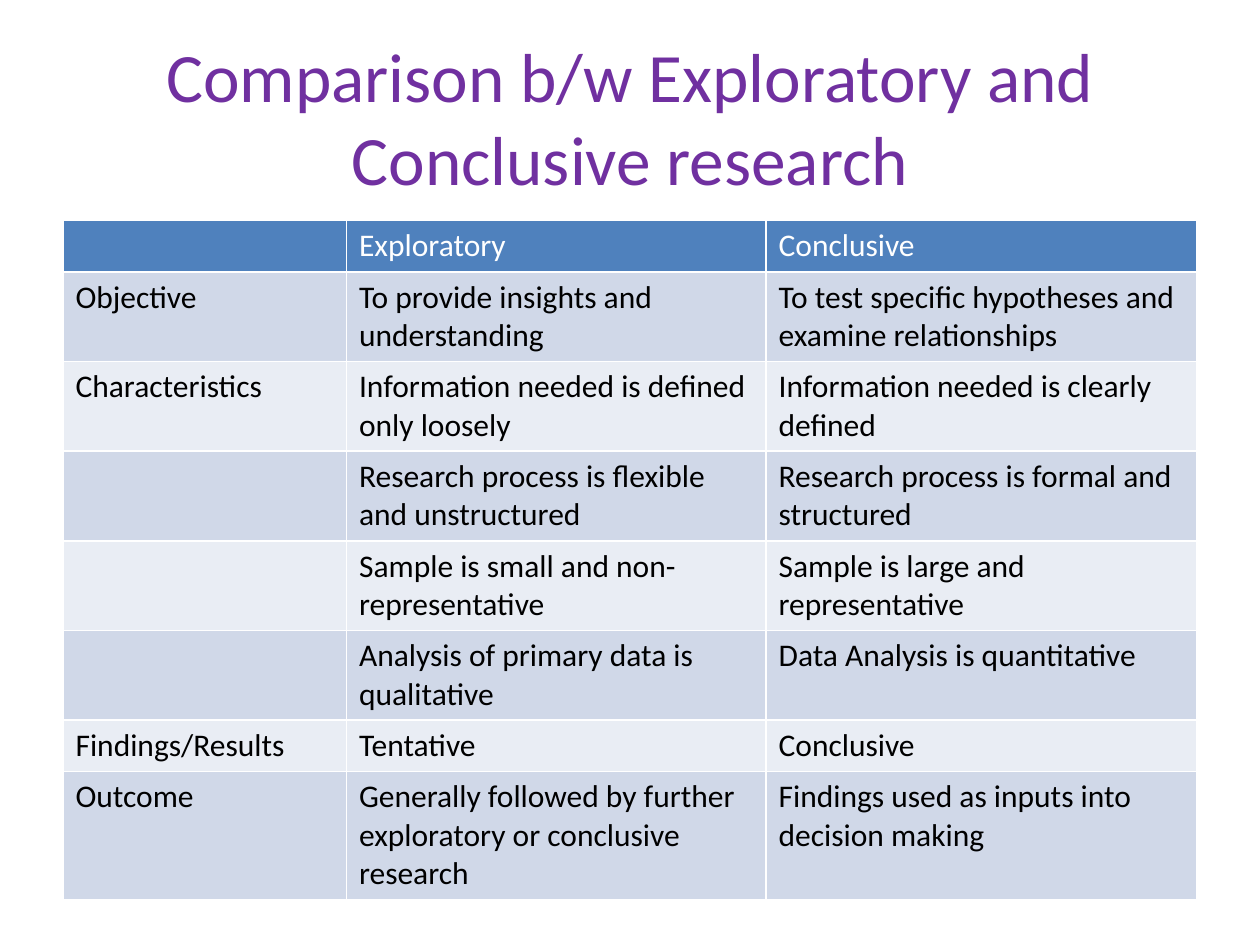
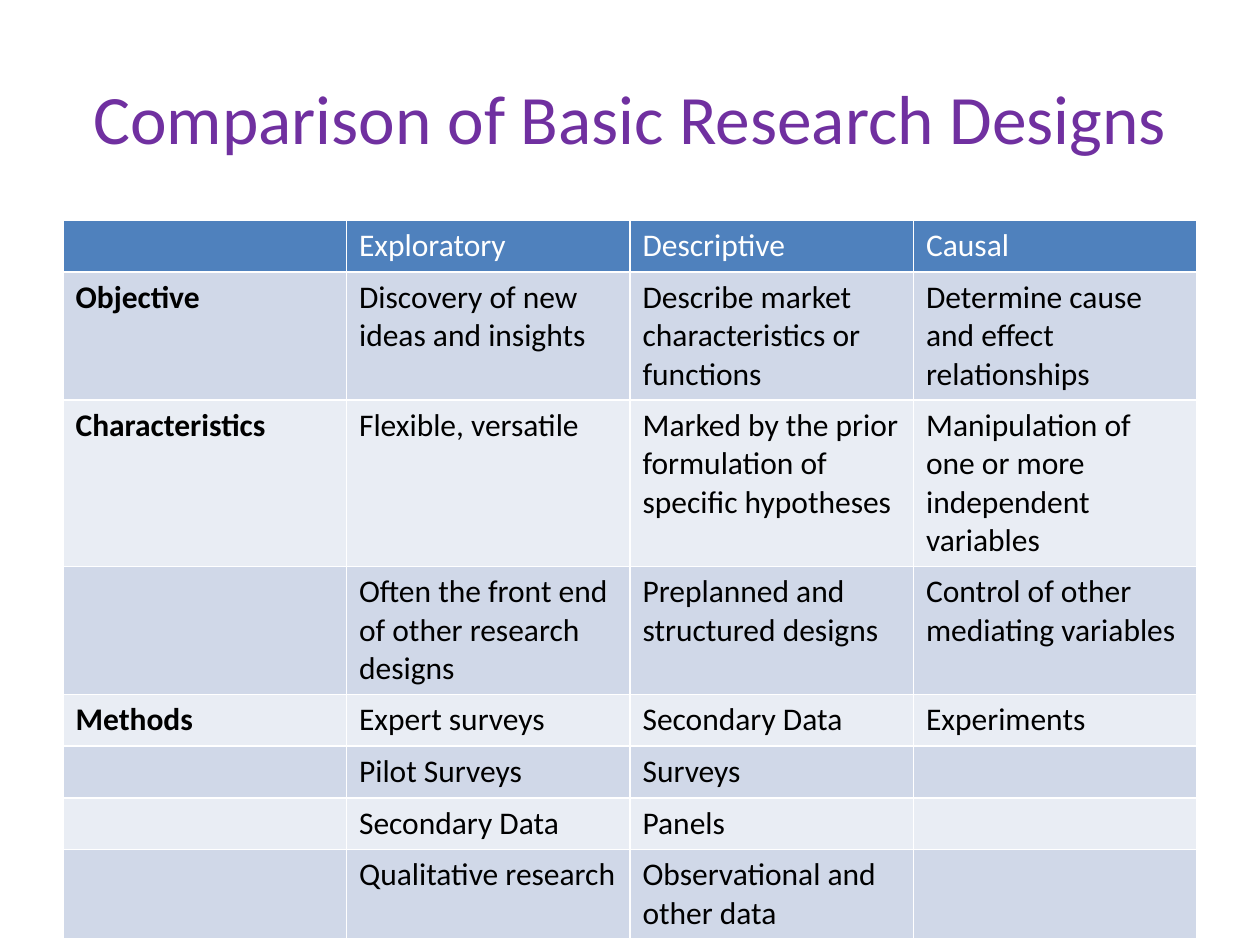
from pptx import Presentation
from pptx.dml.color import RGBColor
from pptx.enum import text
from pptx.util import Inches, Pt

FONT = "Calibri"
PURPLE, BLUE, WHITE, BLACK = "7030A0", "4F81BD", "FFFFFF", "000000"
BANDS = ["D0D8E8", "E9EDF4"]
LEFT, WIDTH = Inches(0.5), Inches(9)
ROW_HEIGHT = 0.41

# Title, column widths, whether row labels are bold, table rows
slides = [
    ("Comparison b/w Exploratory and Conclusive research", [2.25, 3.33, 3.42], False, [
        ["", "Exploratory", "Conclusive"],
        ["Objective", "To provide insights and understanding",
         "To test specific hypotheses and examine relationships"],
        ["Characteristics", "Information needed is defined only loosely",
         "Information needed is clearly defined"],
        ["", "Research process is flexible and unstructured",
         "Research process is formal and structured"],
        ["", "Sample is small and non-representative",
         "Sample is large and representative"],
        ["", "Analysis of primary data is qualitative", "Data Analysis is quantitative"],
        ["Findings/Results", "Tentative", "Conclusive"],
        ["Outcome", "Generally followed by further exploratory or conclusive research",
         "Findings used as inputs into decision making"],
    ]),
    ("Comparison of Basic Research Designs", [2.25] * 4, True, [
        ["", "Exploratory", "Descriptive", "Causal"],
        ["Objective", "Discovery of new ideas and insights",
         "Describe market characteristics or functions",
         "Determine cause and effect relationships"],
        ["Characteristics", "Flexible, versatile",
         "Marked by the prior formulation of specific hypotheses",
         "Manipulation of one or more independent variables"],
        ["", "Often the front end of other research designs",
         "Preplanned and structured designs", "Control of other mediating variables"],
        ["Methods", "Expert surveys", "Secondary Data", "Experiments"],
        ["", "Pilot Surveys", "Surveys", ""],
        ["", "Secondary Data", "Panels", ""],
        ["", "Qualitative research", "Observational and other data", ""],
    ]),
]


def rgb(value):
    return RGBColor.from_string(value)


def format_runs(p, size, color, bold=False):
    for r in p.runs:
        r.font.name = FONT
        r.font.size = Pt(size)
        r.font.bold = bold
        r.font.color.rgb = rgb(color)


prs = Presentation()
prs.slide_width, prs.slide_height = Inches(10), Inches(7.5)

for heading, col_widths, bold_labels, rows in slides:
    s = prs.slides.add_slide(prs.slide_layouts[5])
    s.background.fill.solid()
    s.background.fill.fore_color.rgb = rgb(WHITE)

    title = s.shapes.title
    title.left, title.top, title.width, title.height = LEFT, Inches(0.3), WIDTH, Inches(1.25)
    tf = title.text_frame
    tf.text = heading
    tf.word_wrap = True
    tf.auto_size = text.MSO_AUTO_SIZE.NONE
    tf.vertical_anchor = text.MSO_ANCHOR.MIDDLE
    p = tf.paragraphs[0]
    p.alignment = text.PP_ALIGN.CENTER
    format_runs(p, 39.6, PURPLE)

    # The built-in table style supplies the white cell borders
    table = s.shapes.add_table(len(rows), len(col_widths), LEFT, Inches(1.75),
                               WIDTH, Inches(ROW_HEIGHT * len(rows))).table
    for column, width in zip(table.columns, col_widths):
        column.width = Inches(width)
    for i, row in enumerate(rows):
        table.rows[i].height = Inches(ROW_HEIGHT)
        for j, words in enumerate(row):
            cell = table.cell(i, j)
            cell.fill.solid()
            cell.fill.fore_color.rgb = rgb(BANDS[(i - 1) % 2] if i else BLUE)
            if words:
                cell.text_frame.text = words
                format_runs(cell.text_frame.paragraphs[0], 18, BLACK if i else WHITE,
                            bold_labels and j == 0)

prs.save("out.pptx")
